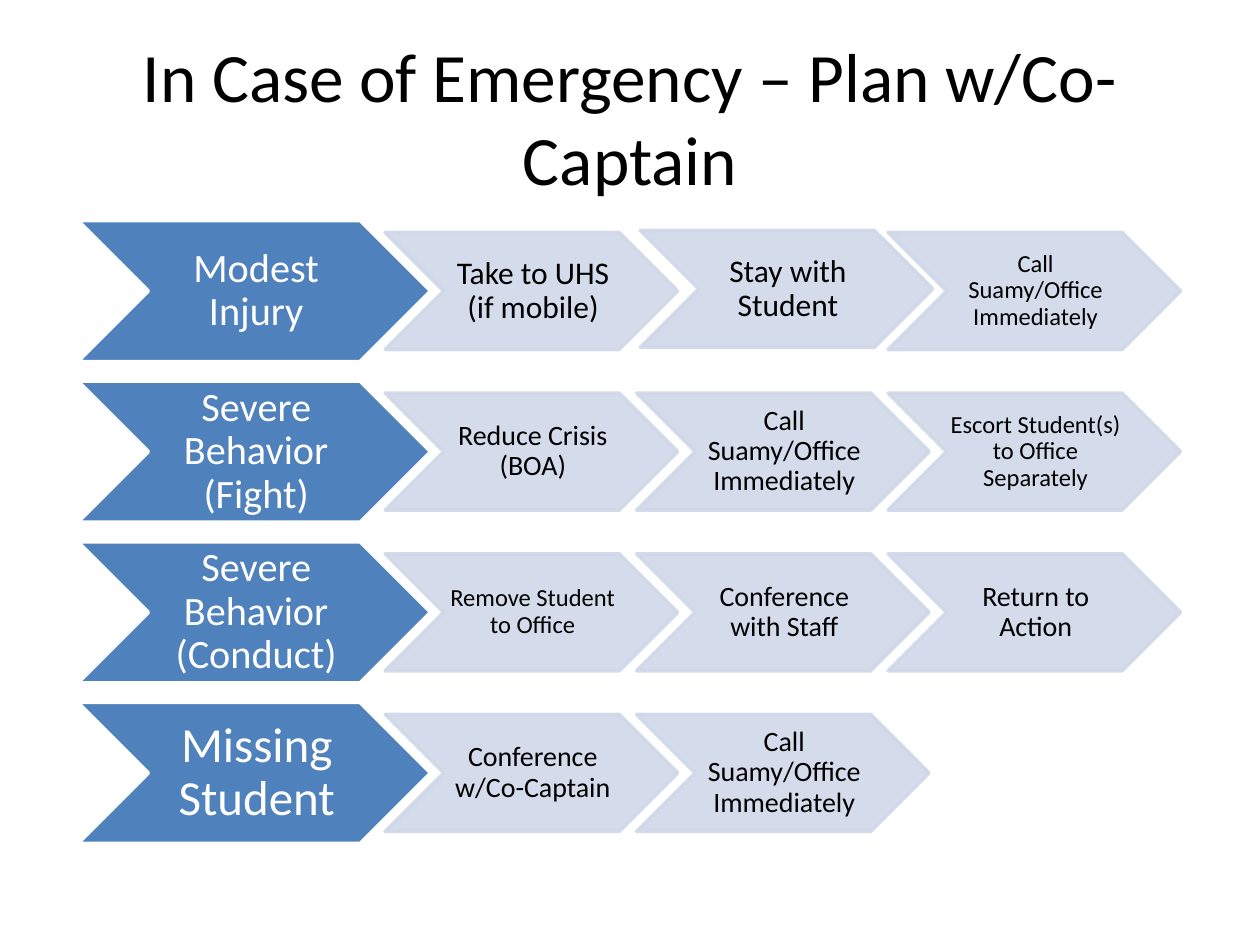
"""Build the emergency plan slide: four situations, each followed by its steps."""
from dataclasses import dataclass

from lxml.etree import SubElement
from pptx import Presentation
from pptx.dml.color import RGBColor
from pptx.dml.fill import FillFormat
from pptx.enum.shapes import MSO_SHAPE
from pptx.enum.text import MSO_ANCHOR, PP_ALIGN
from pptx.oxml.ns import qn
from pptx.shapes.autoshape import Shape
from pptx.slide import Slide
from pptx.util import Pt

FONT = "Calibri"
BLACK, WHITE, BLUE, PALE = "000000", "FFFFFF", "4F81BD", "D0D8E8"
ROW_TOP, ROW_PITCH = 126, 91.8
SITUATION_LEFT, STEP_LEFT, STEP_PITCH = 44.6, 220.1, 143.7


@dataclass(frozen=True)
class Look:
    width: float
    height: float
    fill: str
    line: str
    ink: str
    opacity: int


@dataclass(frozen=True)
class Label:
    text: str
    size: float
    dx: float = 0
    dy: float = 0


@dataclass(frozen=True)
class Plan:
    situation: Label
    steps: tuple[Label, ...]


SITUATION = Look(201.5, 80.6, BLUE, WHITE, WHITE, 100)
STEP = Look(167.2, 66.9, PALE, PALE, BLACK, 90)
CALL = "Call Suamy/Office Immediately"
PLANS = (
    Plan(Label("Modest Injury", 23),
         (Label("Take to UHS (if mobile)", 18),
          Label("Stay with Student", 18, 2, -1.2),
          Label(CALL, 14))),
    Plan(Label("Severe Behavior (Fight)", 23),
         (Label("Reduce Crisis (BOA)", 16),
          Label(CALL, 16),
          Label("Escort Student(s) to Office Separately", 14))),
    Plan(Label("Severe Behavior (Conduct)", 23),
         (Label("Remove Student to Office", 14),
          Label("Conference with Staff", 16),
          Label("Return to Action", 16))),
    Plan(Label("Missing Student", 28),
         (Label("Conference w/Co-Captain", 16),
          Label(CALL, 16))),
)


def color(hex_code: str) -> RGBColor:
    """Turn a hex string into a colour."""
    return RGBColor.from_string(hex_code)


def paint(fill: FillFormat, hex_code: str) -> None:
    """Make a fill solid in one colour."""
    fill.solid()
    fill.fore_color.rgb = color(hex_code)


def write(shape: Shape, text: str, size: float, ink: str, spacing: float = 1) -> None:
    """Write one centred paragraph in the middle of a shape."""
    frame = shape.text_frame
    frame.word_wrap = True
    frame.vertical_anchor = MSO_ANCHOR.MIDDLE
    paragraph = frame.paragraphs[0]
    paragraph.alignment = PP_ALIGN.CENTER
    paragraph.line_spacing = spacing
    run = paragraph.add_run()
    run.text = text
    run.font.name = FONT
    run.font.size = Pt(size)
    run.font.color.rgb = color(ink)


def add_chevron(slide: Slide, label: Label, look: Look, left: float, middle: float) -> None:
    """Draw a labelled chevron centred vertically on its row."""
    chevron = slide.shapes.add_shape(
        MSO_SHAPE.CHEVRON, Pt(left + label.dx), Pt(middle - look.height / 2 + label.dy),
        Pt(look.width), Pt(look.height))
    chevron.shadow.inherit = False
    paint(chevron.fill, look.fill)
    paint(chevron.line.fill, look.line)
    chevron.line.width = Pt(2)
    if look.opacity < 100:
        for tint in chevron._element.spPr.iter(qn("a:srgbClr")):
            SubElement(tint, qn("a:alpha"), val=str(look.opacity * 1000))
    frame = chevron.text_frame
    frame.margin_left = Pt(label.size / 10)
    frame.margin_right = 0
    frame.margin_top = frame.margin_bottom = Pt(1)
    write(chevron, label.text, label.size, look.ink, 0.9)


def add_plan(slide: Slide, plan: Plan, top: float) -> None:
    """Draw one situation and the steps that follow it."""
    middle = top + SITUATION.height / 2
    add_chevron(slide, plan.situation, SITUATION, SITUATION_LEFT, middle)
    for column, step in enumerate(plan.steps):
        add_chevron(slide, step, STEP, STEP_LEFT + column * STEP_PITCH, middle)


def main() -> None:
    """Build and save the slide."""
    deck = Presentation()
    deck.slide_width, deck.slide_height = Pt(720), Pt(540)
    slide = deck.slides.add_slide(deck.slide_layouts[6])
    title = slide.shapes.add_textbox(Pt(36), Pt(21.6), Pt(648), Pt(90))
    write(title, "In Case of Emergency – Plan w/Co-Captain", 39.6, BLACK)
    for row, plan in enumerate(PLANS):
        add_plan(slide, plan, ROW_TOP + row * ROW_PITCH)
    deck.save("out.pptx")


if __name__ == "__main__":
    main()
